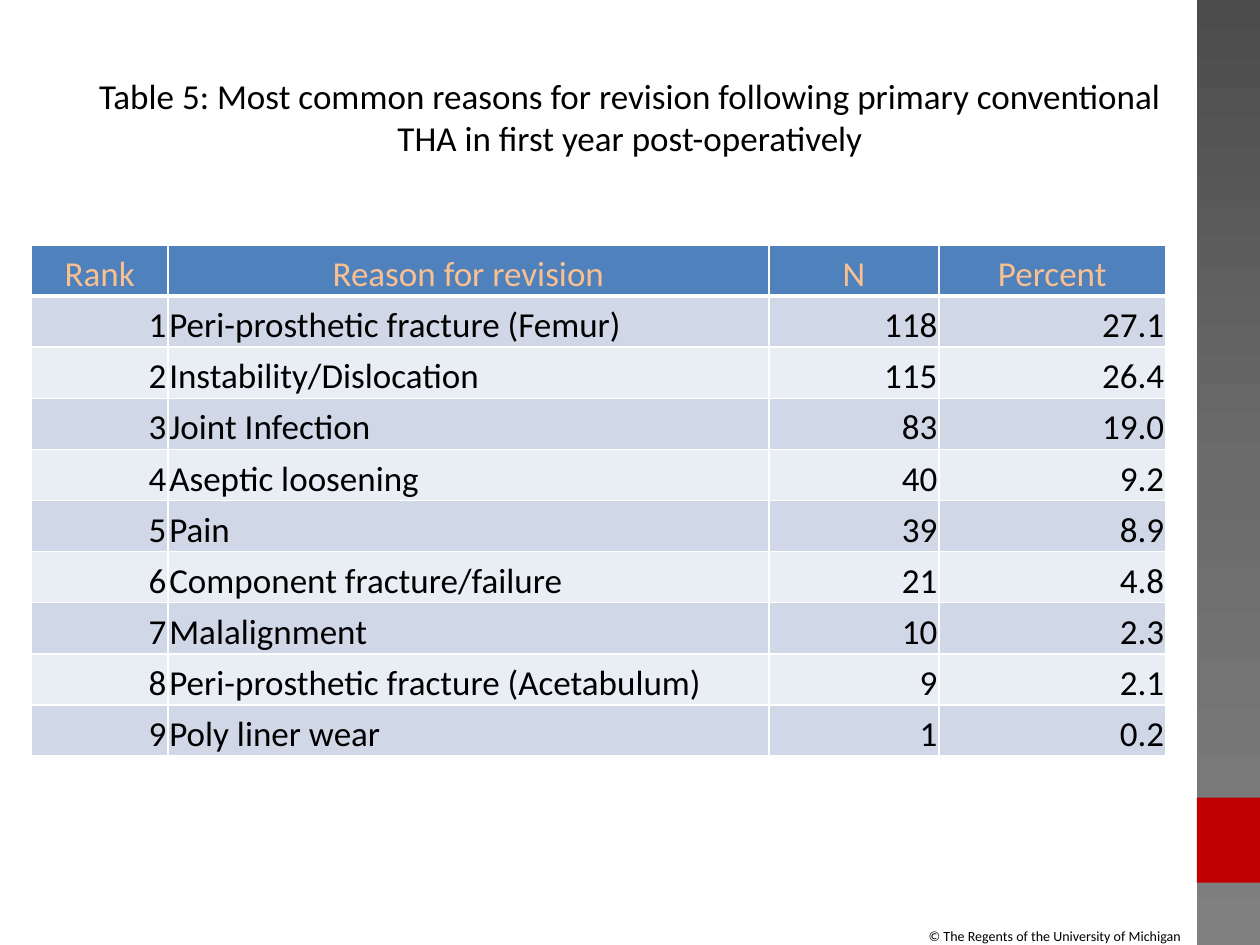
import copy

import lxml.etree
import pptx
import pptx.dml.color
import pptx.enum.shapes
import pptx.enum.text
import pptx.oxml.ns
import pptx.util

Cm = pptx.util.Cm
Pt = pptx.util.Pt
RGBColor = pptx.dml.color.RGBColor
PP_ALIGN = pptx.enum.text.PP_ALIGN
MSO_ANCHOR = pptx.enum.text.MSO_ANCHOR
qn = pptx.oxml.ns.qn

BLACK = RGBColor(0x00, 0x00, 0x00)
WHITE = RGBColor(0xFF, 0xFF, 0xFF)
RED = RGBColor(0xC0, 0x00, 0x00)
GREYS = [RGBColor(0x4C, 0x4C, 0x4C), RGBColor(0x6B, 0x6B, 0x6B), RGBColor(0x80, 0x80, 0x80)]
BLUE = RGBColor(0x4F, 0x81, 0xBD)
PEACH = RGBColor(0xFA, 0xC0, 0x90)
BANDS = [RGBColor(0xD0, 0xD8, 0xE8), RGBColor(0xE9, 0xED, 0xF4)]

TITLE = ("Table 5: Most common reasons for revision following primary conventional "
         "THA in first year post-operatively")
COPYRIGHT = "© The Regents of the University of Michigan"
HEADER = ("Rank", "Reason for revision", "N", "Percent")
REASONS = [
    ("Peri-prosthetic fracture (Femur)", "118", "27.1"),
    ("Instability/Dislocation", "115", "26.4"),
    ("Joint Infection", "83", "19.0"),
    ("Aseptic loosening", "40", "9.2"),
    ("Pain", "39", "8.9"),
    ("Component fracture/failure", "21", "4.8"),
    ("Malalignment", "10", "2.3"),
    ("Peri-prosthetic fracture (Acetabulum)", "9", "2.1"),
    ("Poly liner wear", "1", "0.2"),
]
COL_SHARES = (0.12, 0.53, 0.15, 0.2)


def write(tf, text, size=20, color=BLACK, align=PP_ALIGN.LEFT):
    """Write one formatted paragraph into a text frame."""
    p = tf.paragraphs[0]
    p.alignment = align
    r = p.add_run()
    r.text = text
    r.font.name = "Calibri"
    r.font.size = Pt(size)
    r.font.bold = False
    r.font.color.rgb = color


def add_text(slide, x, y, w, h, text, wrap=True, **fmt):
    """Add a vertically centred text box."""
    tf = slide.shapes.add_textbox(x, y, w, h).text_frame
    tf.word_wrap = wrap
    tf.vertical_anchor = MSO_ANCHOR.MIDDLE
    write(tf, text, **fmt)


def add_rect(slide, x, y, w, h):
    """Add a rectangle without outline or shadow."""
    s = slide.shapes.add_shape(pptx.enum.shapes.MSO_SHAPE.RECTANGLE, x, y, w, h)
    s.shadow.inherit = False
    s.line.fill.background()
    return s


def add_sidebar(slide, x, y, w, h):
    """Add the grey gradient strip with its red block."""
    s = add_rect(slide, x, y, w, h)
    s.fill.gradient()
    s.fill.gradient_angle = 270
    stops = s._element.spPr.find(".//" + qn("a:gsLst"))
    stops.append(copy.deepcopy(stops[-1]))
    for i, (stop, grey) in enumerate(zip(s.fill.gradient_stops, GREYS)):
        stop.position = i / 2
        stop.color.rgb = grey
    block = add_rect(slide, x, y + int(h * 0.844), w, int(h * 0.09))
    block.fill.solid()
    block.fill.fore_color.rgb = RED


def add_borders(cell, bottom):
    """Give a cell white borders with its own bottom width in points."""
    tcPr = cell._tc.get_or_add_tcPr()
    for side, width in (("L", 1), ("R", 1), ("T", 1), ("B", bottom)):
        ln = lxml.etree.SubElement(tcPr, qn("a:ln" + side), w=str(Pt(width)))
        fill = lxml.etree.SubElement(ln, qn("a:solidFill"))
        lxml.etree.SubElement(fill, qn("a:srgbClr"), val=str(WHITE))


def fill_cell(cell, text, fill, bottom=1, **fmt):
    """Format one table cell and write its text."""
    add_borders(cell, bottom)
    cell.fill.solid()
    cell.fill.fore_color.rgb = fill
    cell.margin_left = cell.margin_right = cell.margin_top = Cm(0.03)
    cell.margin_bottom = 0
    cell.vertical_anchor = MSO_ANCHOR.BOTTOM
    write(cell.text_frame, text, **fmt)


def add_reasons_table(slide, x, y, w, h):
    """Add the ranked table of revision reasons."""
    n = len(REASONS) + 1
    table = slide.shapes.add_table(n, len(HEADER), x, y, w, h).table
    for col, share in zip(table.columns, COL_SHARES):
        col.width = int(w * share)
    for row in table.rows:
        row.height = int(h / n)
    for c, text in enumerate(HEADER):
        fill_cell(table.cell(0, c), text, BLUE, bottom=3, color=PEACH, align=PP_ALIGN.CENTER)
    for rank, reason in enumerate(REASONS, 1):
        for c, text in enumerate((str(rank), *reason)):
            align = PP_ALIGN.LEFT if c == 1 else PP_ALIGN.RIGHT
            fill_cell(table.cell(rank, c), text, BANDS[(rank - 1) % 2], align=align)


def main():
    """Build the slide and save it."""
    prs = pptx.Presentation()
    prs.slide_width, prs.slide_height = Cm(25.4), Cm(19.05)
    slide = prs.slides.add_slide(prs.slide_layouts[6])
    add_sidebar(slide, Cm(24.13), 0, Cm(1.27), prs.slide_height)
    add_text(slide, Cm(18.47), Cm(18.56), Cm(5.66), Cm(0.6), COPYRIGHT, wrap=False, size=8)
    add_text(slide, Cm(1.27), Cm(0.76), Cm(22.86), Cm(3.18), TITLE, align=PP_ALIGN.CENTER)
    add_reasons_table(slide, Cm(0.64), Cm(4.94), Cm(22.86), Cm(10.3))
    prs.save("out.pptx")


if __name__ == "__main__":
    main()
